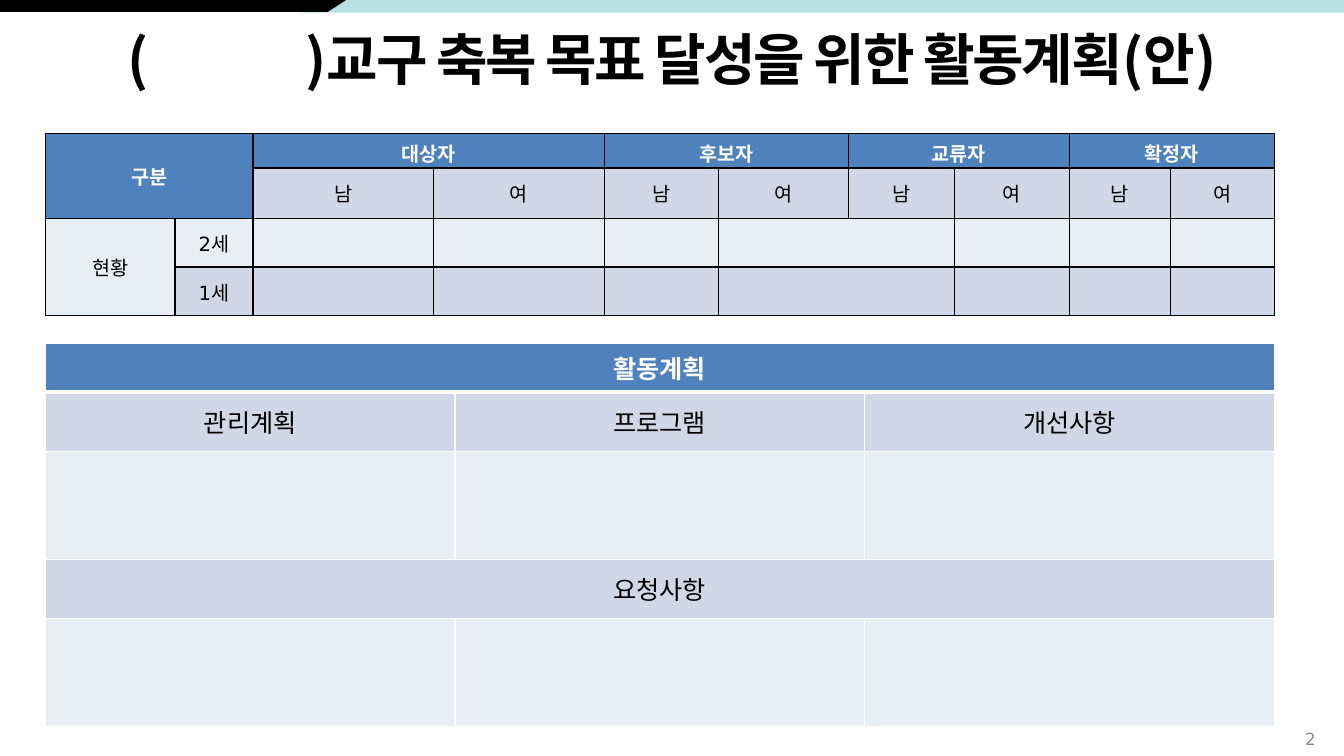
from lxml.etree import SubElement
from pptx import Presentation
from pptx.dml.color import RGBColor
from pptx.enum.shapes import MSO_SHAPE
from pptx.enum.text import MSO_ANCHOR, MSO_AUTO_SIZE, PP_ALIGN
from pptx.oxml.ns import qn
from pptx.util import Pt


class Theme:
    black, white, gray, edge = "000000", "FFFFFF", "8C8C8C", "595959"
    aqua, blue, mid, pale = "BBE0E3", "4F81BD", "D0D8E8", "E9EDF4"
    head, plan, stat, page = 40, 18, 14, 12
    sans, bold = "DejaVu Sans", "Noto Sans CJK KR"


def style(para, size, color, bold=False, face=Theme.sans, align=PP_ALIGN.CENTER):
    para.alignment = align
    font = para.font
    font.name, font.size, font.bold = face, Pt(size), bold
    font.color.rgb = RGBColor.from_string(color)


def paint(cell, text, size, shade, line, foot=1):
    props = cell._tc.get_or_add_tcPr()
    for side in "LRTB":
        width = foot if side == "B" else 1
        rule = SubElement(props, qn(f"a:ln{side}"), w=str(Pt(width)))
        SubElement(SubElement(rule, qn("a:solidFill")), qn("a:srgbClr"), val=line)
    cell.fill.solid()
    cell.fill.fore_color.rgb = RGBColor.from_string(shade)
    cell.vertical_anchor = MSO_ANCHOR.MIDDLE
    cell.text = text
    top = shade == Theme.blue
    style(cell.text_frame.paragraphs[0], size, Theme.white if top else Theme.black, top)


deck = Presentation()
deck.slide_width, deck.slide_height = Pt(960), Pt(540)
slide = deck.slides.add_slide(deck.slide_layouts[5])
shapes = slide.shapes

# Top band
band = shapes.add_shape(MSO_SHAPE.RECTANGLE, Pt(215.5), Pt(0), Pt(744.5), Pt(9))
pen = shapes.build_freeform(Pt(234), Pt(8.6), scale=1)
pen.add_line_segments([(Pt(x), Pt(y)) for x, y in
                       [(248.4, -0.7), (-0.7, -0.7), (-0.7, 8.6)]])
for shape, color in (band, Theme.aqua), (pen.convert_to_shape(), Theme.black):
    shape.shadow.inherit = False
    shape.fill.solid()
    shape.fill.fore_color.rgb = RGBColor.from_string(color)
    shape.line.fill.background()

# Title, with one wide space as the blank to fill in
title = shapes.title
title.left, title.top, title.width, title.height = Pt(26), Pt(13.7), Pt(908), Pt(62.6)
frame = title.text_frame
frame.auto_size = MSO_AUTO_SIZE.NONE
frame.vertical_anchor = MSO_ANCHOR.TOP
para = frame.paragraphs[0]
style(para, Theme.head, Theme.black, True, Theme.bold)
for text, gap in ("(", -1.5), (" ", 103), (")교구 축복 목표 달성을 위한 활동계획(안)", -1.5):
    run = para.add_run()
    run.text = text
    props = run._r.get_or_add_rPr()
    props.set("spc", str(int(gap * 100)))
    rim = SubElement(props, qn("a:ln"), w=str(Pt(0.75)))
    SubElement(SubElement(rim, qn("a:solidFill")), qn("a:srgbClr"), val=Theme.edge)
    SubElement(props, qn("a:ea"), typeface=Theme.bold)

# Page number
box = shapes.add_textbox(Pt(723), Pt(513.5), Pt(224), Pt(28.8))
frame = box.text_frame
frame.word_wrap = True
frame.vertical_anchor = MSO_ANCHOR.MIDDLE
frame.text = "2"
style(frame.paragraphs[0], Theme.page, Theme.gray, align=PP_ALIGN.RIGHT)

# Both tables: top, type size, line colour, heading rule, widths, heights,
# merges (row, column to row, column), row shades, words
stats = (95.5, Theme.stat, Theme.black, 1,
         [92.6, 55.8, 129, 122, 81.7, 92.9, 75.7, 81.7, 72.6, 74],
         [24.5, 36, 34.8, 34.8],
         [(0, 0, 1, 1), (2, 0, 3, 0), (2, 5, 2, 6), (3, 5, 3, 6)]
         + [(0, col, 0, col + 1) for col in range(2, 10, 2)],
         [Theme.blue, Theme.mid, Theme.pale, Theme.mid],
         [["구분", "", "대상자", "", "후보자", "", "교류자", "", "확정자"],
          ["", ""] + ["남", "여"] * 4, ["현황", "2세"], ["", "1세"]])
plans = (245, Theme.plan, Theme.white, 3,
         [292.6] * 3, [35, 42.5, 77, 42.5, 77],
         [(0, 0, 0, 2), (3, 0, 3, 2)],
         [Theme.blue, Theme.mid, Theme.pale, Theme.mid, Theme.pale],
         [["활동계획"], ["관리계획", "프로그램", "개선사항"], [], ["요청사항"], []])

for top, size, line, foot, wides, highs, spans, shades, words in (stats, plans):
    table = shapes.add_table(len(highs), len(wides), Pt(32.4), Pt(top),
                             Pt(sum(wides)), Pt(sum(highs))).table
    table.first_row = table.horz_banding = False
    for col, wide in zip(table.columns, wides):
        col.width = Pt(wide)
    for row, high in zip(table.rows, highs):
        row.height = Pt(high)
    for r, c, last, end in spans:
        table.cell(r, c).merge(table.cell(last, end))
    for r, shade in enumerate(shades):
        for c in range(len(wides)):
            text = words[r][c] if c < len(words[r]) else ""
            paint(table.cell(r, c), text, size, shade, line, 1 if r else foot)

deck.save("out.pptx")
